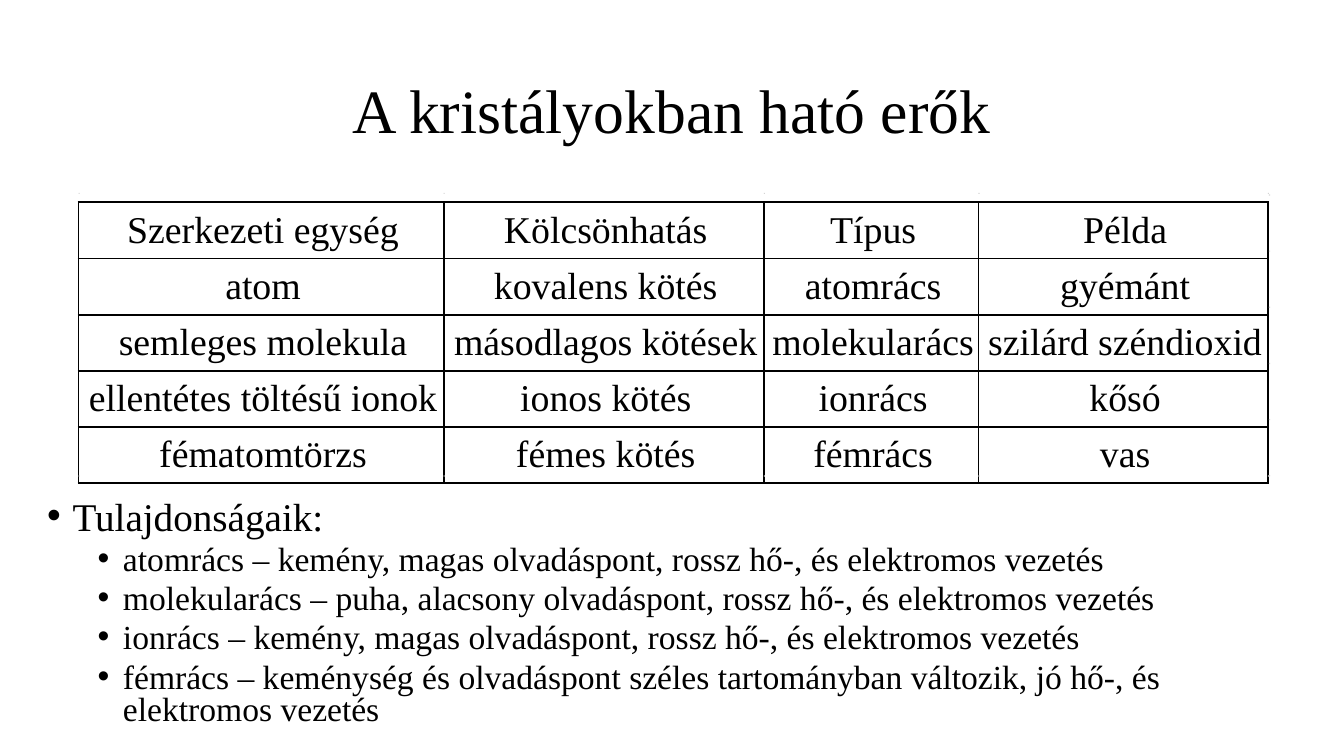
from lxml import etree
from pptx import Presentation
from pptx import util as u
from pptx.dml import color
from pptx.enum import shapes, text
from pptx.oxml import ns

COLORS = {"text": "000000", "border": "000000", "tick": "D4D4D4"}
FONT = "Times New Roman"


def write(p, line, size, **fmt):
    for name, value in fmt.items():
        setattr(p, name, value)
    r = p.add_run()
    r.text = line
    for name, value in {"name": FONT, "size": u.Pt(size)}.items():
        setattr(r.font, name, value)
    r.font.color.rgb = color.RGBColor.from_string(COLORS["text"])


def add_child(parent, tag, **attrs):
    return etree.SubElement(parent, ns.qn(tag), attrs)


prs = Presentation()
prs.slide_width, prs.slide_height = u.Cm(33.87), u.Cm(19.05)
s = prs.slides.add_slide(prs.slide_layouts[6])

title = s.shapes.add_textbox(u.Cm(2.33), u.Cm(1.01), u.Cm(29.21), u.Cm(3.68))
tf = title.text_frame
tf.word_wrap = True
tf.vertical_anchor = text.MSO_ANCHOR.MIDDLE
write(tf.paragraphs[0], "A kristályokban ható erők", 44,
      alignment=text.PP_ALIGN.CENTER, line_spacing=0.9)

properties = [
    (0, "Tulajdonságaik:"),
    (1, "atomrács – kemény, magas olvadáspont, rossz hő-, és elektromos vezetés"),
    (1, "molekularács – puha, alacsony olvadáspont, rossz hő-, és elektromos vezetés"),
    (1, "ionrács – kemény, magas olvadáspont, rossz hő-, és elektromos vezetés"),
    (1, "fémrács – keménység és olvadáspont széles tartományban változik, "
        "jó hő-, és elektromos vezetés"),
]
levels = [
    {"size": 28, "before": 10, "indent": 0.64},
    {"size": 24, "before": 5, "indent": 1.91},
]
body = s.shapes.add_textbox(u.Cm(0.94), u.Cm(12.5), u.Cm(32.05), u.Cm(6.15))
tf = body.text_frame
tf.word_wrap = True
for i, (level, line) in enumerate(properties):
    p = tf.paragraphs[0] if i == 0 else tf.add_paragraph()
    style = levels[level]
    write(p, line, style["size"], level=level, line_spacing=0.8,
          space_before=u.Pt(style["before"]))
    pPr = p._p.get_or_add_pPr()
    pPr.set("marL", str(u.Cm(style["indent"])))
    pPr.set("indent", str(u.Cm(-0.64)))
    add_child(pPr, "a:buFont", typeface="Arial")
    add_child(pPr, "a:buChar", char="•")

rows = [
    ["Szerkezeti egység", "Kölcsönhatás", "Típus", "Példa"],
    ["atom", "kovalens kötés", "atomrács", "gyémánt"],
    ["semleges molekula", "másodlagos kötések", "molekularács", "szilárd széndioxid"],
    ["ellentétes töltésű ionok", "ionos kötés", "ionrács", "kősó"],
    ["fématomtörzs", "fémes kötés", "fémrács", "vas"],
]
edges = [1.98, 11.18, 19.25, 24.66, 31.95]
top, row_height = 5.1, 1.415
frame = s.shapes.add_table(len(rows), len(rows[0]), u.Cm(edges[0]), u.Cm(top),
                           u.Cm(edges[-1] - edges[0]), u.Cm(row_height * len(rows)))
table = frame.table
table.first_row = table.horz_banding = False
for column, left, right in zip(table.columns, edges, edges[1:]):
    column.width = u.Cm(right - left)
cell_format = {"margin_left": u.Cm(0.1), "margin_right": 0, "margin_top": 0,
               "margin_bottom": 0, "vertical_anchor": text.MSO_ANCHOR.MIDDLE}
for row, entries in zip(table.rows, rows):
    row.height = u.Cm(row_height)
    for cell, entry in zip(row.cells, entries):
        for name, value in cell_format.items():
            setattr(cell, name, value)
        write(cell.text_frame.paragraphs[0], entry, 27,
              alignment=text.PP_ALIGN.CENTER)
        tcPr = cell._tc.get_or_add_tcPr()
        for side in ("a:lnL", "a:lnR", "a:lnT", "a:lnB"):
            ln = add_child(tcPr, side, w=str(u.Pt(1.5)))
            add_child(add_child(ln, "a:solidFill"), "a:srgbClr", val=COLORS["border"])
        cell.fill.background()

ticks = [(x, y) for y in (4.86, 11.98) for x in edges]
ticks += [(31.98, 4.9 + i * row_height) for i in range(len(rows) + 1)]
for x, y in ticks:
    sp = s.shapes.add_shape(shapes.MSO_SHAPE.RECTANGLE, u.Cm(x), u.Cm(y),
                            u.Cm(0.03), u.Cm(0.03))
    sp.shadow.inherit = False
    sp.fill.solid()
    sp.fill.fore_color.rgb = color.RGBColor.from_string(COLORS["tick"])
    sp.line.fill.background()

prs.save("out.pptx")
